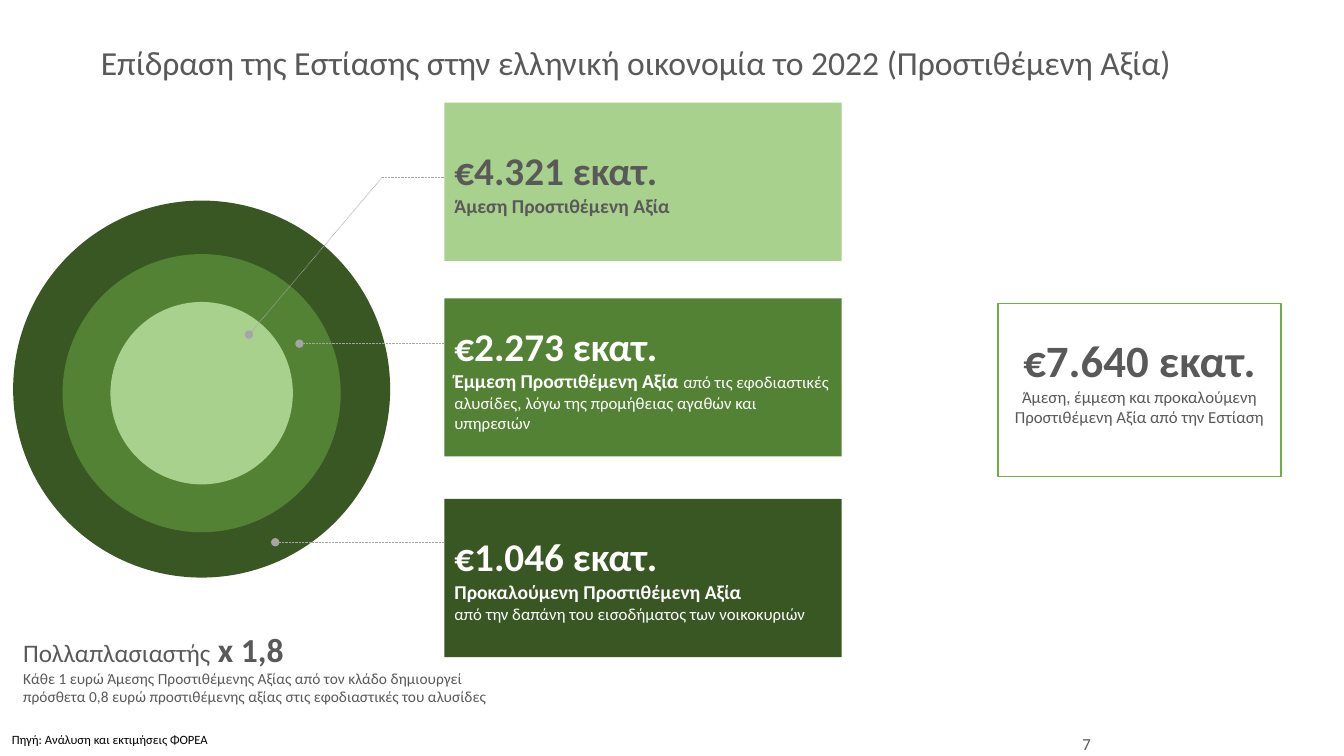
from lxml import etree
from pptx import Presentation
from pptx.dml.color import RGBColor
from pptx.enum.dml import MSO_LINE
from pptx.enum.shapes import MSO_CONNECTOR, MSO_SHAPE
from pptx.enum.text import MSO_ANCHOR, MSO_AUTO_SIZE, PP_ALIGN
from pptx.oxml.ns import qn
from pptx.util import Pt

OVAL, RECT = MSO_SHAPE.OVAL, MSO_SHAPE.RECTANGLE
STRAIGHT, DOTTED = MSO_CONNECTOR.STRAIGHT, MSO_LINE.ROUND_DOT
TOP, MIDDLE = MSO_ANCHOR.TOP, MSO_ANCHOR.MIDDLE
LEFT, CENTER, RIGHT = PP_ALIGN.LEFT, PP_ALIGN.CENTER, PP_ALIGN.RIGHT

BLACK = RGBColor(0x00, 0x00, 0x00)
WHITE = RGBColor(0xFF, 0xFF, 0xFF)
GREY = RGBColor(0x59, 0x59, 0x59)
LEADER_GREY = RGBColor(0xA5, 0xA5, 0xA5)
DARK_GREEN = RGBColor(0x38, 0x57, 0x23)
MID_GREEN = RGBColor(0x54, 0x82, 0x35)
LIGHT_GREEN = RGBColor(0xA9, 0xD1, 0x8E)
BORDER_GREEN = RGBColor(0x70, 0xAD, 0x47)

# Each effect: box top, fill, text colour, paragraphs of (text, size, bold)
EFFECTS = [
    (73.4, LIGHT_GREEN, GREY, [
        [("€4.321 εκατ.", 28, True)],
        [("Άμεση Προστιθέμενη Αξία", 14, True)]]),
    (213.1, MID_GREEN, WHITE, [
        [("€2.273 εκατ.", 28, True)],
        [("Έμμεση Προστιθέμενη Αξία ", 14, True),
         ("από τις εφοδιαστικές αλυσίδες, λόγω της προμήθειας αγαθών "
          "και υπηρεσιών", 12, False)]]),
    (356.4, DARK_GREEN, WHITE, [
        [("€1.046 εκατ.", 28, True)],
        [("Προκαλούμενη Προστιθέμενη Αξία", 14, True)],
        [("από την δαπάνη του εισοδήματος των νοικοκυριών", 12, False)]]),
]
TOTAL = [
    [("€7.640 εκατ.", 32, True)],
    [("Άμεση, έμμεση και προκαλούμενη Προστιθέμενη Αξία από την Εστίαση",
      12, False)],
]
MULTIPLIER = [
    [("Πολλαπλασιαστής", 18, False), (" ", 24, False), ("x 1,8", 24, True)],
    [("Κάθε 1 ευρώ Άμεσης Προστιθέμενης Αξίας από τον κλάδο δημιουργεί "
      "πρόσθετα 0,8 ευρώ προστιθέμενης αξίας στις εφοδιαστικές του αλυσίδες",
      11, False)],
]


def write(frame, paragraphs, color, align=LEFT, anchor=MIDDLE):
    frame.word_wrap = True
    frame.auto_size = MSO_AUTO_SIZE.NONE
    frame.vertical_anchor = anchor
    for index, runs in enumerate(paragraphs):
        paragraph = frame.add_paragraph() if index else frame.paragraphs[0]
        paragraph.alignment = align
        for text, size, bold in runs:
            run = paragraph.add_run()
            run.text = text
            run.font.color.rgb = color
            look = {"name": "Calibri", "size": Pt(size), "bold": bold}
            for attribute, value in look.items():
                setattr(run.font, attribute, value)


def add_label(slide, box, paragraphs, color, **layout):
    label = slide.shapes.add_textbox(*map(Pt, box))
    write(label.text_frame, paragraphs, color, **layout)


def add_block(slide, kind, box, fill, border=None):
    block = slide.shapes.add_shape(kind, *map(Pt, box))
    block.shadow.inherit = False
    block.fill.solid()
    block.fill.fore_color.rgb = fill
    if border:
        block.line.color.rgb = border
        block.line.width = Pt(1)
    else:
        block.line.fill.background()
    return block


def add_leader(slide, start, end, dot=True):
    leader = slide.shapes.add_connector(STRAIGHT, *map(Pt, start + end))
    leader.line.color.rgb = LEADER_GREY
    leader.line.width = Pt(0.5)
    leader.line.dash_style = DOTTED
    properties = leader.element.spPr
    if dot:
        outline = properties.find(qn("a:ln"))
        etree.SubElement(outline, qn("a:headEnd"), type="oval")
    etree.SubElement(properties, qn("a:effectLst"))


def add_title(slide, box):
    title = slide.shapes.title
    title.left, title.top, title.width, title.height = map(Pt, box)
    heading = ("Επίδραση της Εστίασης στην ελληνική οικονομία το 2022 "
               "(Προστιθέμενη Αξία)")
    write(title.text_frame, [[(heading, 24, False)]], GREY)
    title.text_frame.paragraphs[0].line_spacing = 0.9


def add_rings(slide, box):
    left, top, size, _ = box
    # Inner rings share a centre slightly below that of the outer one
    for diameter, drop, fill in ((size, 0, DARK_GREEN),
                                 (198.7, 2.9, MID_GREEN),
                                 (130.3, 2.9, LIGHT_GREEN)):
        inset = (size - diameter) / 2
        add_block(slide, OVAL,
                  (left + inset, top + inset + drop, diameter, diameter), fill)


def add_leaders(slide, box):
    left, top, width, _ = box
    right = left + width
    elbow = (left + 263.5, top - 16.6)
    add_leader(slide, (left + 168.5, top + 95.7), elbow)
    add_leader(slide, elbow, (right, elbow[1]), dot=False)
    for x, y in ((204.5, 102.2), (187.2, 244)):
        add_leader(slide, (left + x, top + y), (right, top + y))


def add_effects(slide, left, width, height):
    for top, fill, color, paragraphs in EFFECTS:
        block = add_block(slide, RECT, (left, top, width, height), fill)
        write(block.text_frame, paragraphs, color)


def add_total(slide, box):
    total = add_block(slide, RECT, box, WHITE, BORDER_GREEN)
    write(total.text_frame, TOTAL, GREY, align=CENTER)
    total.text_frame.margin_bottom = Pt(18)


def add_footer(slide, top):
    source = [[("Πηγή: Ανάλυση και εκτιμήσεις ΦΟΡΕΑ", 9, False)]]
    add_label(slide, (1.4, top + 2, 448, 18), source, BLACK, anchor=TOP)
    add_label(slide, (562.3, top, 224, 29), [[("7", 12, False)]], GREY,
              align=RIGHT)


def main():
    deck = Presentation()
    deck.slide_width, deck.slide_height = Pt(960), Pt(540)
    slide = deck.slides.add_slide(deck.slide_layouts[5])

    # Title
    add_title(slide, (64.8, 9.4, 885.6, 73.4))
    # Concentric rings, with leaders to the three effects
    add_rings(slide, (9.4, 143.3, 269.3, 269.3))
    add_leaders(slide, (9.4, 143.3, 308.1, 269.3))
    add_effects(slide, 317.5, 283.7, 113)
    # Multiplier and overall total
    add_label(slide, (9.4, 442.8, 368.6, 67.7), MULTIPLIER, GREY)
    add_total(slide, (712.8, 216.7, 202.3, 123.8))
    # Source and page number
    add_footer(slide, 517)

    deck.save("out.pptx")


if __name__ == "__main__":
    main()
